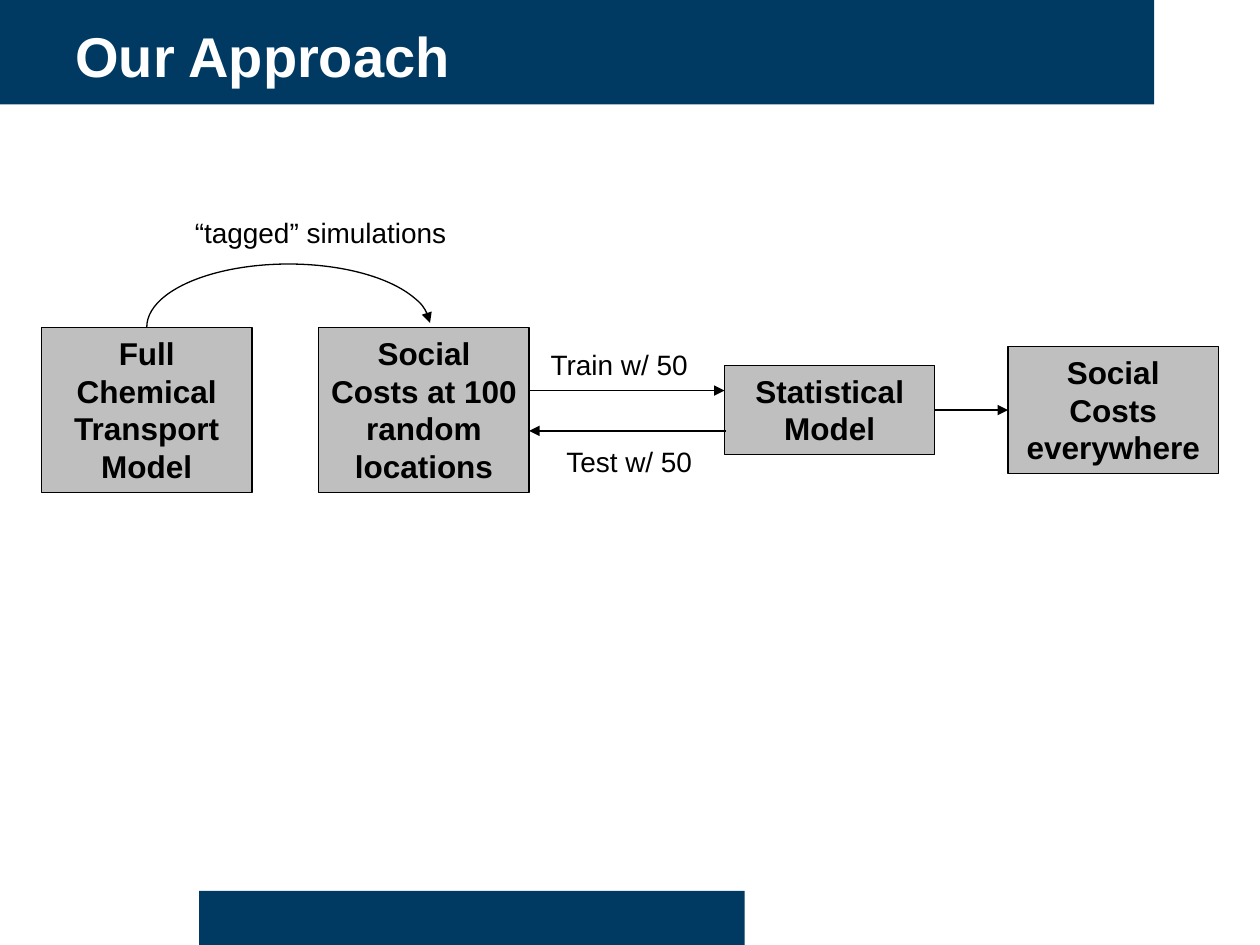
from lxml import etree
from pptx import Presentation
from pptx.dml.color import RGBColor
from pptx.enum.shapes import MSO_CONNECTOR, MSO_SHAPE
from pptx.enum.text import MSO_ANCHOR, PP_ALIGN
from pptx.oxml.ns import qn
from pptx.util import Inches, Pt

NAVY = RGBColor(0x00, 0x3A, 0x62)
GRAY = RGBColor(0xBF, 0xBF, 0xBF)
BLACK = RGBColor(0, 0, 0)
WHITE = RGBColor(0xFF, 0xFF, 0xFF)
FONT = "Arial"
LINE_WIDTH = Pt(0.75)

# Content: positions in inches
TITLE = "Our Approach"
BANDS = [(0, 0, 9.16, 0.83), (1.58, 7.07, 4.33, 0.43)]
BOX_WIDTH = 1.67
BOXES = [  # text, left, top, height
    ("Full Chemical Transport Model", 0.33, 2.6, 1.31),
    ("Social Costs at 100 random locations", 2.53, 2.6, 1.31),
    ("Statistical Model", 5.75, 2.9, 0.71),
    ("Social Costs everywhere", 8, 2.75, 1.01),
]
LABEL_SIZE = (2.33, 0.37)
LABELS = [  # text, left, top
    ("“tagged” simulations", 1.38, 1.66),
    ("Train w/ 50", 3.75, 2.71),
    ("Test w/ 50", 3.83, 3.48),
]
EXCHANGE_ARROWS = [(4.2, 5.75, 3.1), (5.76, 4.2, 3.42)]  # from x, to x, y


def write(shape, text, size, color, bold=False, align=PP_ALIGN.CENTER,
          anchor=MSO_ANCHOR.TOP):
    frame = shape.text_frame
    frame.word_wrap = True
    frame.vertical_anchor = anchor
    paragraph = frame.paragraphs[0]
    paragraph.text = text
    paragraph.alignment = align
    font = paragraph.font
    font.name, font.size, font.bold = FONT, Pt(size), bold
    font.color.rgb = color


def add_text(slide, text, position, *style, **options):
    box = slide.shapes.add_textbox(*map(Inches, position))
    write(box, text, *style, **options)


def add_block(slide, position, fill):
    block = slide.shapes.add_shape(MSO_SHAPE.RECTANGLE, *map(Inches, position))
    block.shadow.inherit = False
    block.fill.solid()
    block.fill.fore_color.rgb = fill
    block.line.fill.background()
    return block


def style_line(shape, arrowhead=False):
    shape.line.color.rgb = BLACK
    shape.line.width = LINE_WIDTH
    if arrowhead:
        outline = shape.line._get_or_add_ln()
        etree.SubElement(outline, qn("a:tailEnd"), type="triangle")


def add_arrow(slide, start_x, end_x, y):
    arrow = slide.shapes.add_connector(
        MSO_CONNECTOR.STRAIGHT, Inches(start_x), Inches(y), Inches(end_x), Inches(y))
    style_line(arrow, arrowhead=True)
    etree.SubElement(arrow._element.spPr, qn("a:effectLst"))
    return arrow


def main():
    presentation = Presentation()
    presentation.slide_width, presentation.slide_height = Inches(10), Inches(7.5)
    slide = presentation.slides.add_slide(presentation.slide_layouts[6])

    # Header and footer bands, title
    for band in BANDS:
        add_block(slide, band, NAVY)
    add_text(slide, TITLE, (0.5, 0.08, 9, 0.67), 32, WHITE, bold=True,
             align=PP_ALIGN.LEFT, anchor=MSO_ANCHOR.BOTTOM)

    # Process boxes
    boxes = []
    for text, left, top, height in BOXES:
        box = add_block(slide, (left, top, BOX_WIDTH, height), GRAY)
        style_line(box)
        write(box, text, 18, BLACK, bold=True)
        boxes.append(box)

    # Curved arrow from the full model to the sampled costs
    arc = slide.shapes.add_shape(
        MSO_SHAPE.ARC, Inches(1.79), Inches(1.47), Inches(1), Inches(2.25))
    arc.rotation = 270
    arc.adjustments[0], arc.adjustments[1] = 162, 53.02
    arc.shadow.inherit = False
    arc.fill.background()
    style_line(arc, arrowhead=True)

    # Labels and straight arrows
    for text, left, top in LABELS:
        add_text(slide, text, (left, top, *LABEL_SIZE), 16, BLACK)
    for start_x, end_x, y in EXCHANGE_ARROWS:
        add_arrow(slide, start_x, end_x, y)
    result_arrow = add_arrow(slide, 7.42, 8, 3.25)
    result_arrow.begin_connect(boxes[2], 3)
    result_arrow.end_connect(boxes[3], 1)

    presentation.save("out.pptx")


if __name__ == "__main__":
    main()
